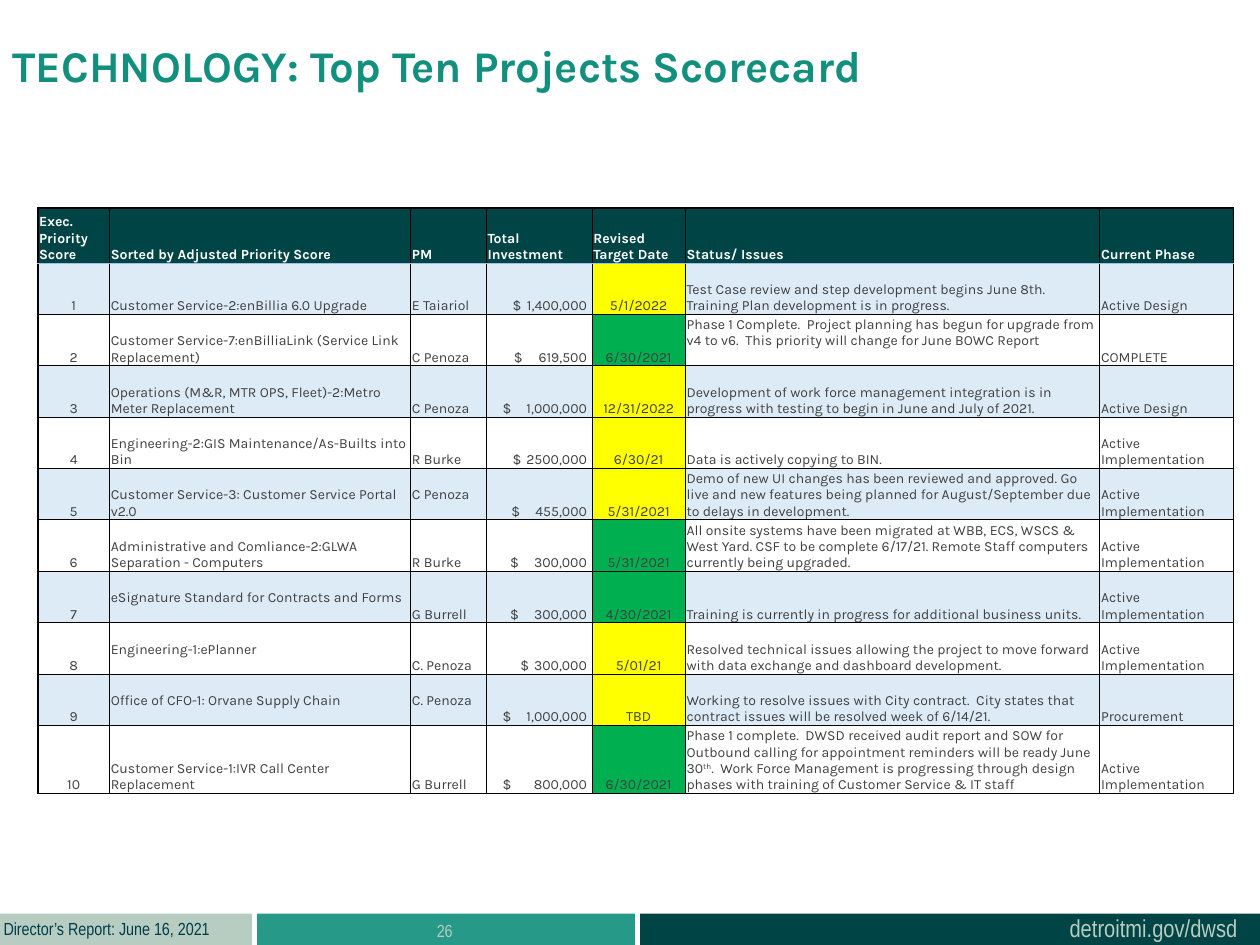
from typing import NamedTuple

from lxml import etree
from pptx import Presentation
from pptx import util as u
from pptx.dml.color import RGBColor
from pptx.enum import shapes, text
from pptx.oxml.ns import qn

TEAL = RGBColor(0x27, 0x99, 0x89)
TITLE_TEAL = RGBColor(0x13, 0x8F, 0x7E)
DEEP_GREEN = RGBColor(0x00, 0x44, 0x45)
SAGE = RGBColor(0xB7, 0xCD, 0xC2)
NAVY = RGBColor(0x00, 0x3B, 0x49)
WHITE = RGBColor(0xFF, 0xFF, 0xFF)
BLACK = RGBColor(0x00, 0x00, 0x00)
CHARCOAL = RGBColor(0x40, 0x40, 0x40)
PALE_BLUE = RGBColor(0xDD, 0xEB, 0xF7)
HEADER_RULE = RGBColor(0x9B, 0xC2, 0xE6)
YELLOW = RGBColor(0xFF, 0xFF, 0x00)
GREEN = RGBColor(0x00, 0xB0, 0x50)

PAGE_WIDTH, PAGE_HEIGHT = u.Inches(10), u.Inches(7.5)
BODY_FONT, FOOTER_FONT = "Karla", "Arial Narrow"
LEFT, CENTER = text.PP_ALIGN.LEFT, text.PP_ALIGN.CENTER


class Area(NamedTuple):
    """Left, top, width and height in percent of the slide."""
    left: float
    top: float
    width: float
    height: float

    def lengths(self) -> tuple[int, int, int, int]:
        return (int(PAGE_WIDTH * self.left / 100), int(PAGE_HEIGHT * self.top / 100),
                int(PAGE_WIDTH * self.width / 100), int(PAGE_HEIGHT * self.height / 100))


class Bar(NamedTuple):
    left: float
    width: float
    color: RGBColor


class Label(NamedTuple):
    area: Area
    words: str
    size: float
    color: RGBColor
    align: text.PP_ALIGN
    wrap: bool


class Project(NamedTuple):
    """One scorecard row; dollar_inset is in inches, raised lists columns set one line up."""
    name: str
    manager: str
    dollar_inset: float
    amount: str
    target: str
    signal: RGBColor
    status: str
    phase: str
    raised: tuple[int, ...] = ()


BARS = [Bar(20.4, 30, TEAL), Bar(50.8, 49.2, DEEP_GREEN), Bar(0, 20, SAGE)]
LABELS = [
    Label(Area(83.9, 96, 15.5, 4.53), "detroitmi.gov/dwsd", 14, SAGE, LEFT, False),
    Label(Area(-0.7, 96.53, 18.4, 3.6), "Director’s Report: June 16, 2021", 10, NAVY, LEFT, False),
    Label(Area(20.3, 96.67, 30, 5.33), "26", 10, SAGE, CENTER, True),
]
TITLE_AREA = Area(0, 3.47, 75.9, 10.27)
TABLE_AREA = Area(3, 22, 95, 61.87)
COLUMN_WIDTHS = [0.57, 2.39, 0.6, 0.84, 0.74, 3.29, 1.06]
HEADER_HEIGHT, LAST_HEIGHT = 0.44, 0.54
NAME, MANAGER, INVESTMENT, TARGET, STATUS = range(1, 6)
LINE_HEIGHT = 0.13
AMOUNT_GAP = 0.04

HEADINGS = ["Exec. Priority Score", "Sorted by Adjusted Priority Score", "PM",
            "Total Investment", "Revised Target Date", "Status/ Issues", "Current Phase"]
PROJECTS = [
    Project("Customer Service-2:enBillia 6.0 Upgrade", "E Taiariol", 0.21, "1,400,000",
            "5/1/2022", YELLOW, "Test Case review and step development begins June 8th. "
            " Training Plan development is in progress.", "Active Design"),
    Project("Customer Service-7:enBilliaLink (Service Link Replacement)", "C Penoza", 0.22,
            "619,500", "6/30/2021", GREEN, "Phase 1 Complete.  Project planning has begun for "
            "upgrade from v4 to v6.  This priority will change for June BOWC Report",
            "COMPLETE", (STATUS,)),
    Project("Operations (M&R, MTR OPS, Fleet)-2:Metro Meter Replacement", "C Penoza", 0.13,
            "1,000,000", "12/31/2022", YELLOW, "Development of work force management integration "
            "is in progress with testing to begin in June and July of 2021.", "Active Design"),
    Project("Engineering-2:GIS Maintenance/As-Builts into Bin", "R Burke", 0.21, "2500,000",
            "6/30/21", YELLOW, "Data is actively copying to BIN.", "Active Implementation"),
    Project("Customer Service-3: Customer Service Portal v2.0", "C Penoza", 0.2, "455,000",
            "5/31/2021", YELLOW, "Demo of new UI changes has been reviewed and approved. Go live "
            "and new features being planned for August/September due to delays in development.",
            "Active Implementation", (MANAGER,)),
    Project("Administrative and Comliance-2:GLWA Separation - Computers", "R Burke", 0.19,
            "300,000", "5/31/2021", GREEN, "All onsite systems have been migrated at WBB, ECS, "
            "WSCS & West Yard. CSF to be complete 6/17/21. Remote Staff computers currently "
            "being upgraded.", "Active Implementation"),
    Project("eSignature Standard for Contracts and Forms", "G Burrell", 0.19, "300,000",
            "4/30/2021", GREEN, "Training is currently in progress for additional business units.",
            "Active Implementation", (NAME,)),
    Project("Engineering-1:ePlanner", "C. Penoza", 0.27, "300,000", "5/01/21", YELLOW,
            "Resolved technical issues allowing the project to move forward with data exchange "
            "and dashboard development.", "Active Implementation", (NAME,)),
    Project("Office of CFO-1: Orvane Supply Chain", "C. Penoza", 0.13, "1,000,000", "TBD", YELLOW,
            "Working to resolve issues with City contract.  City states that contract issues "
            "will be resolved week of 6/14/21.", "Procurement", (NAME, MANAGER)),
    Project("Customer Service-1:IVR Call Center Replacement", "G Burrell", 0.13, "800,000",
            "6/30/2021", GREEN, "Phase 1 complete.  DWSD received audit report and SOW for "
            "Outbound calling for appointment reminders will be ready June 30^th^.  Work Force "
            "Management is progressing through design phases with training of Customer Service "
            "& IT staff", "Active Implementation"),
]


def write(para, words: str, font: str, size: float, color: RGBColor, bold: bool = False) -> None:
    """Add runs to para; words between carets are superscript."""
    for index, part in enumerate(words.split("^")):
        span = para.add_run()
        span.text = part
        span.font.name, span.font.size, span.font.bold = font, u.Pt(size), bold
        span.font.color.rgb = color
        if index % 2:
            span.font._element.set("baseline", "30000")


def draw_title(page) -> None:
    title = page.shapes.title
    title.left, title.top, title.width, title.height = TITLE_AREA.lengths()
    title.text_frame.vertical_anchor = text.MSO_ANCHOR.TOP
    title.text_frame.word_wrap = True
    para = title.text_frame.paragraphs[0]
    para.alignment = LEFT
    para.line_spacing = 1.0
    write(para, "TECHNOLOGY: Top Ten Projects Scorecard", BODY_FONT, 25, TITLE_TEAL, True)


def draw_bar(page, bar: Bar) -> None:
    area = Area(bar.left, 96.67, bar.width, 3.33)
    box = page.shapes.add_shape(shapes.MSO_SHAPE.RECTANGLE, *area.lengths())
    box.shadow.inherit = False
    box.fill.solid()
    box.fill.fore_color.rgb = bar.color
    box.line.fill.background()


def draw_label(page, label: Label) -> None:
    box = page.shapes.add_textbox(*label.area.lengths())
    box.text_frame.word_wrap = label.wrap
    para = box.text_frame.paragraphs[0]
    para.alignment = label.align
    write(para, label.words, FOOTER_FONT, label.size, label.color)


def set_borders(cell, row: int, column: int) -> None:
    """Thin black grid, thicker outer edge, light blue rule under the header."""
    last_row, last_column = len(PROJECTS), len(HEADINGS) - 1
    outer = {"lnL": column == 0, "lnR": column == last_column,
             "lnT": row == 0, "lnB": row == last_row}
    blue_side = {0: "lnB", 1: "lnT"}.get(row)
    properties = cell._tc.get_or_add_tcPr()
    for index, (side, thick) in enumerate(outer.items()):
        line = etree.Element(qn(f"a:{side}"), w=str(u.Pt(1 if thick else 0.5)))
        fill = etree.SubElement(line, qn("a:solidFill"))
        color = HEADER_RULE if side == blue_side else BLACK
        etree.SubElement(fill, qn("a:srgbClr"), val=str(color))
        properties.insert(index, line)


def set_amount_tab(para, position: float) -> None:
    tabs = etree.SubElement(para._p.get_or_add_pPr(), qn("a:tabLst"))
    etree.SubElement(tabs, qn("a:tab"), pos=str(u.Inches(position)), algn="r")


def fill_cell(cell, row: int, column: int, words: str, project: Project | None) -> None:
    cell.vertical_anchor = text.MSO_ANCHOR.BOTTOM
    cell.margin_left = cell.margin_right = cell.margin_top = u.Inches(0.01)
    cell.margin_bottom = 0
    para = cell.text_frame.paragraphs[0]
    fill = DEEP_GREEN if project is None else PALE_BLUE if row % 2 else None
    if project:
        if column in project.raised:
            cell.margin_bottom = u.Inches(LINE_HEIGHT)
        if column == INVESTMENT:
            cell.margin_left = u.Inches(project.dollar_inset)
            set_amount_tab(para, COLUMN_WIDTHS[column] - AMOUNT_GAP - project.dollar_inset)
        if column == TARGET:
            fill = project.signal
        if column in (0, TARGET):
            para.alignment = CENTER
    if fill is None:
        cell.fill.background()
    else:
        cell.fill.solid()
        cell.fill.fore_color.rgb = fill
    write(para, words, BODY_FONT, 8, CHARCOAL if project else WHITE, project is None)
    set_borders(cell, row, column)


def draw_scorecard(page) -> None:
    area = TABLE_AREA.lengths()
    table = page.shapes.add_table(len(PROJECTS) + 1, len(HEADINGS), *area).table
    table.horz_banding = False
    for column, width in zip(table.columns, COLUMN_WIDTHS):
        column.width = u.Inches(width)
    header, last = u.Inches(HEADER_HEIGHT), u.Inches(LAST_HEIGHT)
    middle = (area[3] - header - last) // (len(PROJECTS) - 1)
    heights = [header, *[middle] * (len(PROJECTS) - 1), last]
    for row, (project, height) in enumerate(zip([None, *PROJECTS], heights)):
        table.rows[row].height = height
        entries = HEADINGS if project is None else [
            str(row), project.name, project.manager, f"$\t{project.amount}",
            project.target, project.status, project.phase]
        for column, words in enumerate(entries):
            fill_cell(table.cell(row, column), row, column, words, project)


def main() -> None:
    deck = Presentation()
    deck.slide_width, deck.slide_height = PAGE_WIDTH, PAGE_HEIGHT
    page = deck.slides.add_slide(deck.slide_layouts.get_by_name("Title Only"))
    for bar in BARS:
        draw_bar(page, bar)
    for label in LABELS:
        draw_label(page, label)
    draw_title(page)
    draw_scorecard(page)
    deck.save("out.pptx")


if __name__ == "__main__":
    main()
